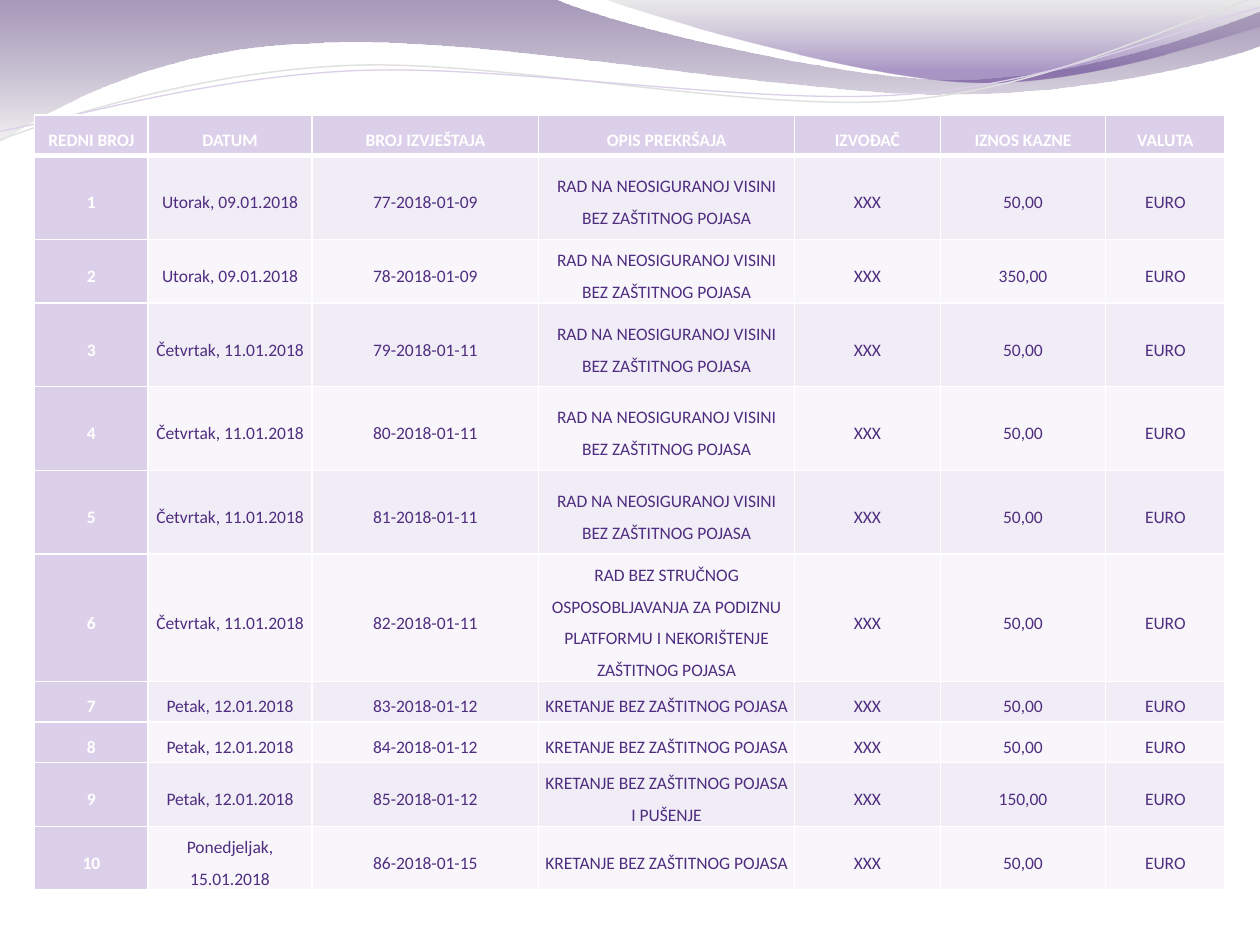
from dataclasses import dataclass
from itertools import chain
from typing import NamedTuple, Optional

from lxml.etree import Element, SubElement
from pptx import Presentation
from pptx.dml.color import RGBColor
from pptx.enum.text import MSO_ANCHOR as Anchor, PP_ALIGN as Align
from pptx.oxml.ns import qn
from pptx.util import Pt

COLORS = {
    "white": "FFFFFF",
    "text": "4F2D7F",
    "header": "DBCFE9",
    "odd_row": "F1EDF7",
    "even_row": "F8F6FB",
    "deep_purple": "391B64",
    "pale_gray": "E7E7E7",
    "mid_gray": "BDBDBD",
    "purple": "43197F",
    "line_gray": "E1E1E1",
}
FONT = "Calibri"


class Stop(NamedTuple):
    position: float
    color: str
    opacity: int


@dataclass
class Wave:
    start: tuple
    segments: list  # one point for a straight edge, three for a Bezier curve
    stops: tuple = ()
    line_color: Optional[str] = None
    line_width: float = 0
    rotation: float = 0


@dataclass
class Violation:
    date: str
    report: str
    description: str
    fine: str = "50,00"
    contractor: str = "XXX"
    currency: str = "EURO"


class Column(NamedTuple):
    heading: str
    width: float


WAVES = [
    Wave((0, 0), [
        [(316.8, -0.7)],
        [(342.7, 12.2), (478.1, 45.4), (545.8, 45.4)],
        [(614.2, 45.4), (689.8, 18.7), (720, 6.5)],
        [(720.7, 25.9)],
        [(707.8, 31.7), (626.4, 54.7), (537.1, 54)],
        [(447.8, 54), (275, 20.2), (185, 24.5)],
        [(92.9, 25.9), (33.1, 59.8), (-0.7, 81.4)],
        [(0, 0)],
    ], stops=(Stop(0, "deep_purple", 45), Stop(1, "pale_gray", 55))),
    Wave((344.9, -0.7), [
        [(366.5, 7.9), (491, 44.6), (553.7, 46.8)],
        [(616.3, 49.7), (691.9, 23), (720, 15.1)],
        [(720, 0)],
        [(344.9, -0.7)],
    ], stops=(Stop(0, "mid_gray", 30), Stop(0.8, "purple", 45))),
    Wave((-1.4, 63), [
        [(33.8, 51.7), (114.1, 29.4), (199.8, 29.9)],
        [(284.8, 30.3), (425.9, 67.3), (512.5, 64.8)],
        [(599.1, 62.4), (676.5, 25.7), (720.2, 15.5)],
    ], line_color="line_gray", line_width=0.85, rotation=357.3),
    Wave((-1.1, 58), [
        [(32.9, 53.8), (118.3, 32.5), (204.1, 33)],
        [(290.5, 33.4), (428.9, 63.8), (515.5, 61.4)],
        [(601.4, 59.6), (678.4, 30.1), (721.4, 21.3)],
    ], line_color="header", line_width=0.75, rotation=357.3),
]

COLUMNS = [
    Column("REDNI BROJ", 64.8),
    Column("DATUM", 93.6),
    Column("BROJ IZVJEŠTAJA", 129.6),
    Column("OPIS PREKRŠAJA", 146.1),
    Column("IZVOĐAČ", 83.5),
    Column("IZNOS KAZNE", 94.3),
    Column("VALUTA", 68.4),
]
LOW, TALL = 23.2, 47.8
ROW_HEIGHTS = [LOW, TALL, 33.1, TALL, TALL, TALL, 72.7, LOW, LOW, 35.3, LOW]

UNSAFE_HEIGHT = "RAD NA NEOSIGURANOJ VISINI BEZ ZAŠTITNOG POJASA"
NO_HARNESS = "KRETANJE BEZ ZAŠTITNOG POJASA"
UNTRAINED = ("RAD BEZ STRUČNOG OSPOSOBLJAVANJA ZA PODIZNU PLATFORMU "
             "I NEKORIŠTENJE ZAŠTITNOG POJASA")
TUESDAY, THURSDAY = "Utorak, 09.01.2018", "Četvrtak, 11.01.2018"
FRIDAY, MONDAY = "Petak, 12.01.2018", "Ponedjeljak, 15.01.2018"

VIOLATIONS = [
    Violation(TUESDAY, "77-2018-01-09", UNSAFE_HEIGHT),
    Violation(TUESDAY, "78-2018-01-09", UNSAFE_HEIGHT, "350,00"),
    Violation(THURSDAY, "79-2018-01-11", UNSAFE_HEIGHT),
    Violation(THURSDAY, "80-2018-01-11", UNSAFE_HEIGHT),
    Violation(THURSDAY, "81-2018-01-11", UNSAFE_HEIGHT),
    Violation(THURSDAY, "82-2018-01-11", UNTRAINED),
    Violation(FRIDAY, "83-2018-01-12", NO_HARNESS),
    Violation(FRIDAY, "84-2018-01-12", NO_HARNESS),
    Violation(FRIDAY, "85-2018-01-12", NO_HARNESS + " I PUŠENJE", "150,00"),
    Violation(MONDAY, "86-2018-01-15", NO_HARNESS),
]


def rgb(name: str) -> RGBColor:
    return RGBColor.from_string(COLORS[name])


def bend_curves(shape, segments: list) -> None:
    """Turn each run of three control points into one Bezier curve."""
    edges = iter(list(shape.element.spPr.iter(qn("a:lnTo"))))
    for segment in segments:
        controls = [next(edges) for _ in segment]
        if len(controls) == 3:
            curve = Element(qn("a:cubicBezTo"))
            controls[0].addprevious(curve)
            for control in controls:
                curve.append(control[0])
                control.getparent().remove(control)


def draw_wave(slide, wave: Wave) -> None:
    builder = slide.shapes.build_freeform(*map(Pt, wave.start))
    controls = [(Pt(x), Pt(y)) for x, y in chain(*wave.segments)]
    builder.add_line_segments(controls, close=bool(wave.stops))
    shape = builder.convert_to_shape()
    bend_curves(shape, wave.segments)
    shape.rotation = wave.rotation
    shape.shadow.inherit = False
    if not wave.stops:
        shape.fill.background()
        shape.line.color.rgb = rgb(wave.line_color)
        shape.line.width = Pt(wave.line_width)
        return
    shape.line.fill.background()
    shape.fill.gradient()
    shape.fill.gradient_angle = 270
    for target, stop in zip(shape.fill.gradient_stops, wave.stops):
        target.position = stop.position
        target.color.rgb = rgb(stop.color)
    for color, stop in zip(shape.element.spPr.iter(qn("a:srgbClr")), wave.stops):
        SubElement(color, qn("a:alpha"), val=str(stop.opacity * 1000))


def set_borders(cell, top: float, bottom: float) -> None:
    properties = cell._tc.get_or_add_tcPr()
    for side, width in (("L", 1), ("R", 1), ("T", top), ("B", bottom)):
        border = SubElement(properties, qn(f"a:ln{side}"), w=str(Pt(width)))
        fill = SubElement(border, qn("a:solidFill"))
        SubElement(fill, qn("a:srgbClr"), val=COLORS["white"])


def fill_cell(cell, text: str, row: int, is_heading: bool) -> None:
    set_borders(cell, top=3 if row == 1 else 1, bottom=3 if row == 0 else 1)
    cell.fill.solid()
    band = "odd_row" if row % 2 else "even_row"
    cell.fill.fore_color.rgb = rgb("header" if is_heading else band)
    cell.vertical_anchor = Anchor.MIDDLE
    cell.margin_left = cell.margin_right = Pt(3.6)
    cell.margin_top = cell.margin_bottom = Pt(0)
    cell.text = text
    paragraph = cell.text_frame.paragraphs[0]
    paragraph.alignment = Align.CENTER
    paragraph.line_spacing = 1.5
    paragraph.font.name = FONT
    paragraph.font.size = Pt(10)
    paragraph.font.bold = is_heading
    paragraph.font.color.rgb = rgb("white" if is_heading else "text")


def draw_violations(slide) -> None:
    rows = [[column.heading for column in COLUMNS]]
    for number, v in enumerate(VIOLATIONS, 1):
        rows.append([str(number), v.date, v.report, v.description,
                     v.contractor, v.fine, v.currency])
    table = slide.shapes.add_table(
        len(rows), len(COLUMNS), Pt(19.8), Pt(65.8),
        Pt(sum(column.width for column in COLUMNS)), Pt(sum(ROW_HEIGHTS))).table
    table.first_col = True
    for target, column in zip(table.columns, COLUMNS):
        target.width = Pt(column.width)
    for r, (texts, height) in enumerate(zip(rows, ROW_HEIGHTS)):
        table.rows[r].height = Pt(height)
        for c, text in enumerate(texts):
            fill_cell(table.cell(r, c), text, r, is_heading=r == 0 or c == 0)


def main() -> None:
    deck = Presentation()
    deck.slide_width, deck.slide_height = Pt(720), Pt(540)
    slide = deck.slides.add_slide(deck.slide_layouts[6])
    # Wavy band along the top
    for wave in WAVES:
        draw_wave(slide, wave)
    # Table of violations and fines
    draw_violations(slide)
    deck.save("out.pptx")


if __name__ == "__main__":
    main()
